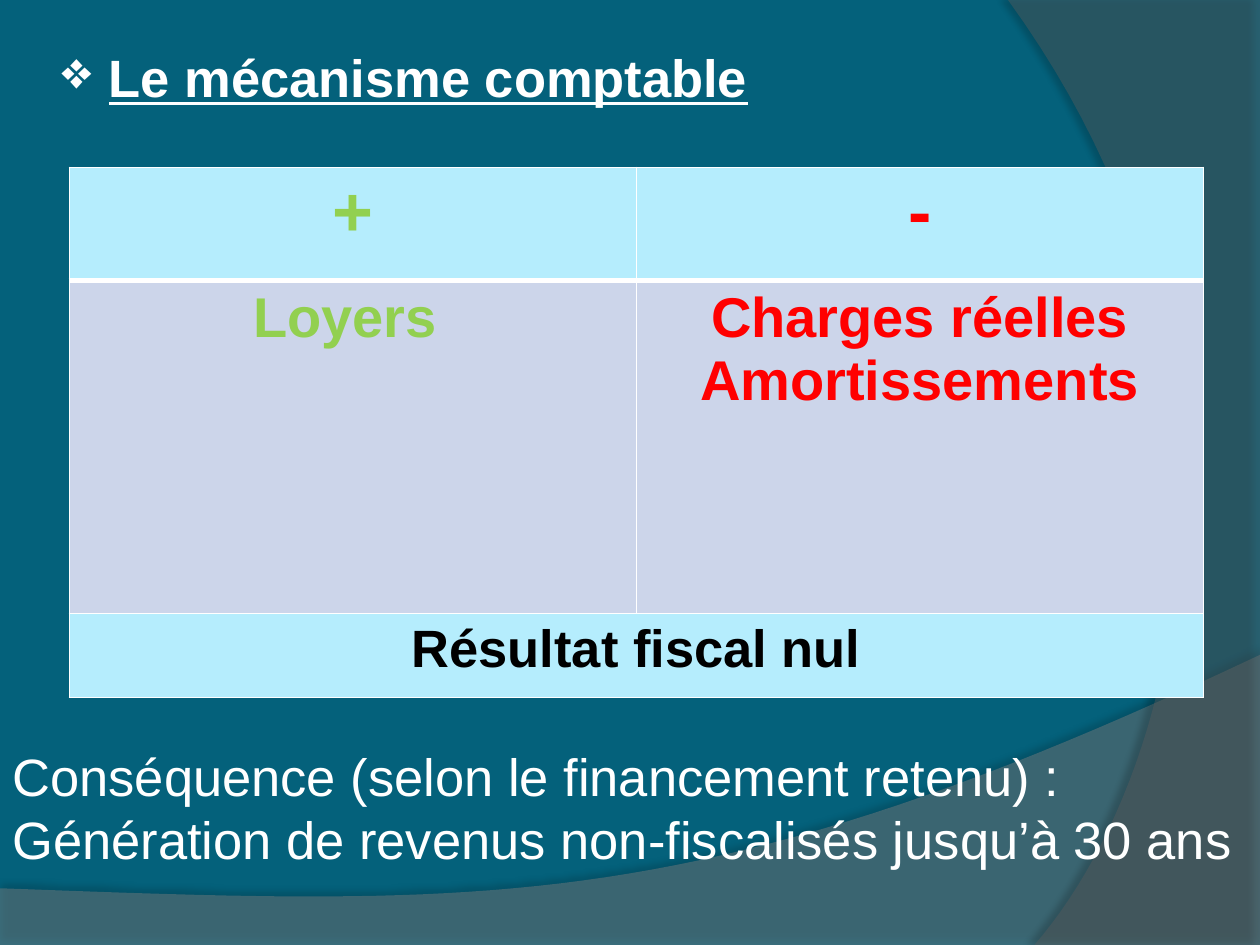
"""Build the slide on the accounting mechanism of rental income."""
import dataclasses

import lxml.etree
import pptx
import pptx.dml.color
import pptx.enum.text
import pptx.oxml.ns
import pptx.util

WIDTH, HEIGHT = pptx.util.Inches(10), pptx.util.Inches(7.5)
CENTER = pptx.enum.text.PP_ALIGN.CENTER


@dataclasses.dataclass(frozen=True)
class Theme:
    """Colours, type sizes and font of the slide."""
    font: str = "Arial"
    background: str = "04617B"
    wave: str = "7F7F7F"
    band: str = "5E5E5E"
    shadow: str = "000000"
    white: str = "FFFFFF"
    black: str = "000000"
    gain: str = "92D050"
    cost: str = "FF0000"
    accent_row: str = "B5EDFD"
    body_row: str = "CCD5EA"
    sign_size: int = 40
    entry_size: int = 32
    text_size: int = 30


THEME = Theme()


def rgb(code):
    """Turn a hex code into a colour."""
    return pptx.dml.color.RGBColor.from_string(code)


def across(share):
    """Return a share of the slide's width."""
    return round(WIDTH * share)


def down(share):
    """Return a share of the slide's height."""
    return round(HEIGHT * share)


def add_xml(parent, tag, **attributes):
    """Append a DrawingML element to its parent."""
    values = {name: str(value) for name, value in attributes.items()}
    return lxml.etree.SubElement(parent, pptx.oxml.ns.qn(tag), values)


def curve(start, control_1, control_2, end, steps=48):
    """Sample a cubic Bézier curve, leaving out its start."""
    points = []
    for step in range(1, steps + 1):
        t = step / steps
        weights = ((1 - t) ** 3, 3 * t * (1 - t) ** 2, 3 * t * t * (1 - t), t ** 3)
        knots = (start, control_1, control_2, end)
        points.append(tuple(sum(w * k[axis] for w, k in zip(weights, knots)) for axis in (0, 1)))
    return points


def add_swoosh(slide, outline, color, opacity, shadow_opacity, distance, direction):
    """Draw a translucent shape with a soft shadow from slide shares."""
    points = [(across(x), down(y)) for x, y in outline]
    builder = slide.shapes.build_freeform(*points[0], scale=1.0)
    builder.add_line_segments(points[1:], close=True)
    swoosh = builder.convert_to_shape()
    swoosh.fill.solid()
    swoosh.fill.fore_color.rgb = rgb(color)
    swoosh.line.fill.background()
    swoosh.shadow.inherit = False
    properties = swoosh._element.spPr
    fill_color = properties.find(".//" + pptx.oxml.ns.qn("a:srgbClr"))
    add_xml(fill_color, "a:alpha", val=opacity * 1000)
    effects = properties.find(pptx.oxml.ns.qn("a:effectLst"))
    shadow = add_xml(effects, "a:outerShdw", blurRad=pptx.util.Pt(4), dist=pptx.util.Pt(distance),
                     dir=direction * 60000, algn="ctr", rotWithShape=0)
    shadow_color = add_xml(shadow, "a:srgbClr", val=THEME.shadow)
    add_xml(shadow_color, "a:alpha", val=shadow_opacity * 1000)


def style_text(frame, size, color, bold=False, underline=False, align=None):
    """Format every paragraph and run of a text frame."""
    for paragraph in frame.paragraphs:
        paragraph.alignment = align
        for run in paragraph.runs:
            run.font.name = THEME.font
            run.font.size = pptx.util.Pt(size)
            run.font.color.rgb = rgb(color)
            run.font.bold = bold
            run.font.underline = underline


def add_text(slide, text, left, top, width, height, **style):
    """Add a wrapping text box and return its frame."""
    frame = slide.shapes.add_textbox(across(left), down(top), across(width), down(height)).text_frame
    frame.word_wrap = True
    frame.text = text
    style_text(frame, THEME.text_size, THEME.white, **style)
    return frame


def add_bullet(paragraph, symbol, indent):
    """Hang a bullet symbol before a paragraph."""
    properties = paragraph._p.get_or_add_pPr()
    properties.set("marL", str(indent))
    properties.set("indent", str(-indent))
    add_xml(properties, "a:buChar", char=symbol)


def set_borders(cell, **widths):
    """Draw the white borders of a cell, ahead of its fill."""
    properties = cell._tc.get_or_add_tcPr()
    for position, (side, points) in enumerate(widths.items()):
        border = add_xml(properties, "a:ln" + side, w=pptx.util.Pt(points))
        add_xml(add_xml(border, "a:solidFill"), "a:srgbClr", val=THEME.white)
        properties.insert(position, border)


def add_ledger(slide):
    """Add the table of gains, costs and the fiscal result."""
    rows = [
        (0.9, THEME.accent_row, THEME.sign_size, [("+", THEME.gain), ("-", THEME.cost)]),
        (2.64, THEME.body_row, THEME.entry_size,
         [("Loyers ", THEME.gain), ("Charges réelles\nAmortissements", THEME.cost)]),
        (0.67, THEME.accent_row, THEME.text_size, [("Résultat fiscal nul", THEME.black), ("", THEME.black)]),
    ]
    total = sum(row[0] for row in rows)
    ledger = slide.shapes.add_table(len(rows), 2, across(0.055), down(0.177), across(0.9),
                                    pptx.util.Inches(total)).table
    ledger.horz_banding = False
    ledger.cell(2, 0).merge(ledger.cell(2, 1))
    for r, (height, fill, size, entries) in enumerate(rows):
        ledger.rows[r].height = pptx.util.Inches(height)
        for c, (text, color) in enumerate(entries):
            cell = ledger.cell(r, c)
            cell.fill.solid()
            cell.fill.fore_color.rgb = rgb(fill)
            set_borders(cell, L=1, R=1, T=3 if r == 1 else 1, B=3 if r == 0 else 1)
            if text:
                cell.text_frame.text = text
                style_text(cell.text_frame, size, color, bold=True, align=CENTER)


def main():
    """Compose the slide and save it."""
    deck = pptx.Presentation()
    deck.slide_width, deck.slide_height = WIDTH, HEIGHT
    slide = deck.slides.add_slide(deck.slide_layouts[6])
    slide.background.fill.solid()
    slide.background.fill.fore_color.rgb = rgb(THEME.background)

    wave = [(0, 0.94), (0, 1), (1, 1), (1, 0.693)]
    wave += curve(wave[-1], (0.559, 0.972), (0.391, 0.959), wave[0])
    add_swoosh(slide, wave, THEME.wave, 45, 35, 3.5, 270)
    band = [(1, 0), (1, 1), (0.821, 1)]
    band += curve(band[-1], (0.935, 0.825), (1.018, 0.4), (0.8, 0))
    add_swoosh(slide, band, THEME.band, 40, 45, 4, 180)

    add_ledger(slide)
    add_text(slide, "Conséquence (selon le financement retenu) : "
             "Génération de revenus non-fiscalisés jusqu’à 30 ans", 0, 0.781, 1, 0.148)
    heading = add_text(slide, "Le mécanisme comptable", 0.039, 0.041, 0.836, 0.081,
                       bold=True, underline=True)
    add_bullet(heading.paragraphs[0], "❖", across(0.0375))
    deck.save("out.pptx")


if __name__ == "__main__":
    main()
